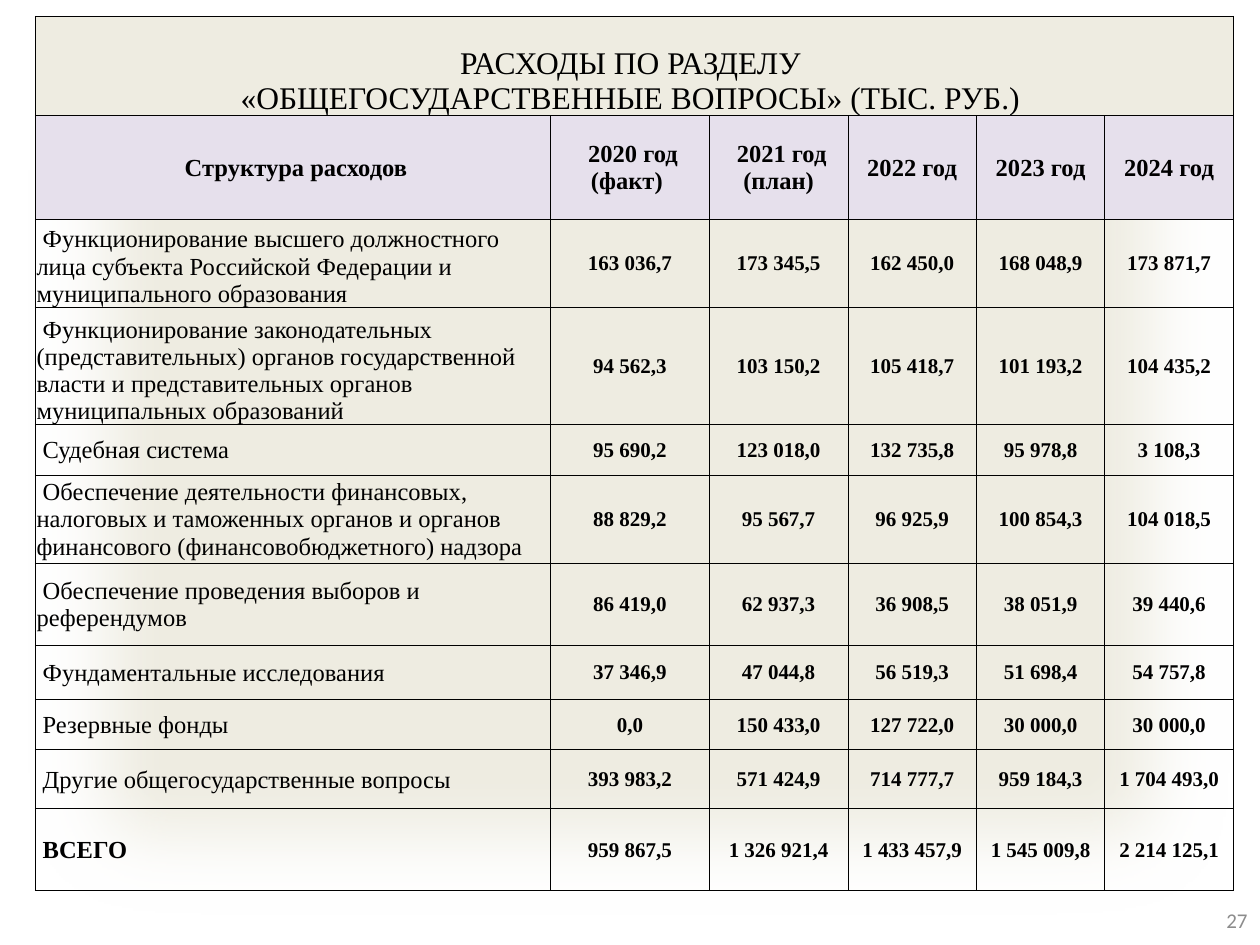
from lxml.etree import SubElement
from pptx import Presentation
from pptx.dml.color import RGBColor
from pptx.enum.shapes import MSO_SHAPE
from pptx.enum.text import MSO_ANCHOR, PP_ALIGN
from pptx.oxml import parse_xml
from pptx.oxml.ns import nsdecls, qn
from pptx.util import Inches, Pt

BEIGE = RGBColor(0xEE, 0xEC, 0xE1)
LILAC = RGBColor(0xE6, 0xE0, 0xEC)
BLACK = RGBColor(0, 0, 0)
GREY = RGBColor(0x8C, 0x8C, 0x8C)
NBSP = " "  # no-break space that indents the labels

TITLE = ["РАСХОДЫ ПО РАЗДЕЛУ ", "«ОБЩЕГОСУДАРСТВЕННЫЕ ВОПРОСЫ» (ТЫС. РУБ.)" + NBSP]
HEADER = ["Структура расходов", "2020 год (факт) ", "2021 год (план)",
          "2022 год ", "2023 год ", "2024 год "]
EXPENSES = [
    ("Функционирование высшего должностного лица субъекта Российской Федерации "
     "и муниципального образования",
     "163 036,7", "173 345,5", "162 450,0", "168 048,9", "173 871,7"),
    ("Функционирование законодательных (представительных) органов государственной "
     "власти и представительных органов муниципальных образований",
     "94 562,3", "103 150,2", "105 418,7", "101 193,2", "104 435,2"),
    ("Судебная система",
     "95 690,2", "123 018,0", "132 735,8", "95 978,8", "3 108,3"),
    ("Обеспечение деятельности финансовых, налоговых и таможенных органов и органов "
     "финансового (финансовобюджетного) надзора",
     "88 829,2", "95 567,7", "96 925,9", "100 854,3", "104 018,5"),
    ("Обеспечение проведения выборов и референдумов",
     "86 419,0", "62 937,3", "36 908,5", "38 051,9", "39 440,6"),
    ("Фундаментальные исследования",
     "37 346,9", "47 044,8", "56 519,3", "51 698,4", "54 757,8"),
    ("Резервные фонды",
     "0,0", "150 433,0", "127 722,0", "30 000,0", "30 000,0"),
    ("Другие общегосударственные вопросы",
     "393 983,2", "571 424,9", "714 777,7", "959 184,3", "1 704 493,0"),
    ("ВСЕГО",
     "959 867,5", "1 326 921,4", "1 433 457,9", "1 545 009,8", "2 214 125,1"),
]
COL_WIDTHS = [4.09, 1.26, 1.1, 1.02, 1.02, 1.02]
ROW_HEIGHTS = [0.79, 0.82, 0.7, 0.93, 0.4, 0.7, 0.65, 0.43, 0.4, 0.47, 0.65]


class SlideBuilder:
    """Holds the text style and the current slide."""

    font = "Times New Roman"

    def __init__(self, slide):
        self.s = slide

    def add_run(self, p, text, size, bold=False, color=BLACK, font=None):
        r = p.add_run()
        r.text = text
        r.font.size, r.font.bold = Pt(size), bold
        r.font.name = font or self.font
        r.font.color.rgb = color

    def backdrop(self, width, height, color, soft_edge):
        sp = self.s.shapes.add_shape(MSO_SHAPE.RECTANGLE, 0, 0, width, height)
        sp.fill.solid()
        sp.fill.fore_color.rgb = color
        sp.line.fill.background()
        sp.shadow.inherit = False
        effects = sp._element.spPr.find(qn("a:effectLst"))
        SubElement(effects, qn("a:softEdge"), rad=str(soft_edge))

    def table(self, left, top, col_widths, row_heights):
        frame = self.s.shapes.add_table(
            len(row_heights), len(col_widths), left, top,
            Inches(sum(col_widths)), Inches(sum(row_heights)))
        table = frame.table
        table.first_row = table.horz_banding = False
        for col, width in zip(table.columns, col_widths):
            col.width = Inches(width)
        for row, height in zip(table.rows, row_heights):
            row.height = Inches(height)
        for cell in table.iter_cells():
            self.format_cell(cell)
        return table

    def format_cell(self, cell):
        cell.margin_left = cell.margin_right = cell.margin_top = Inches(0.01)
        cell.margin_bottom = 0
        cell.vertical_anchor = MSO_ANCHOR.MIDDLE
        cell.fill.background()
        tc_pr = cell._tc.get_or_add_tcPr()
        for i, side in enumerate(("lnL", "lnR", "lnT", "lnB")):
            tc_pr.insert(i, parse_xml(
                f'<a:{side} {nsdecls("a")} w="{Pt(0.5)}"><a:solidFill>'
                f'<a:srgbClr val="{BLACK}"/></a:solidFill></a:{side}>'))

    def cell_text(self, cell, lines, size, bold=False, align=PP_ALIGN.CENTER, fill=None):
        if fill is not None:
            cell.fill.solid()
            cell.fill.fore_color.rgb = fill
        tf = cell.text_frame
        for i, line in enumerate(lines):
            p = tf.add_paragraph() if i else tf.paragraphs[0]
            p.alignment = align
            self.add_run(p, line, size, bold)

    def page_number(self, left, top, width, height, number):
        tf = self.s.shapes.add_textbox(left, top, width, height).text_frame
        tf.word_wrap = True
        tf.vertical_anchor = MSO_ANCHOR.MIDDLE
        p = tf.paragraphs[0]
        p.alignment = PP_ALIGN.RIGHT
        self.add_run(p, number, 12, color=GREY, font="Calibri")


def main():
    prs = Presentation()
    prs.slide_width, prs.slide_height = Inches(10), Inches(7.5)
    b = SlideBuilder(prs.slides.add_slide(prs.slide_layouts[6]))

    # Backdrop with faded edges
    b.backdrop(prs.slide_width, prs.slide_height, BEIGE, Pt(50))

    # Title row, merged across the table
    table = b.table(Inches(0.28), Inches(0.13), COL_WIDTHS, ROW_HEIGHTS)
    title = table.cell(0, 0)
    title.merge(table.cell(0, len(COL_WIDTHS) - 1))
    title.vertical_anchor = MSO_ANCHOR.BOTTOM
    b.cell_text(title, TITLE, 18, fill=BEIGE)

    # Header row
    for col, text in enumerate(HEADER):
        b.cell_text(table.cell(1, col), [NBSP + text], 14, bold=True, fill=LILAC)

    # Expense rows; the last one is the total
    for row, (label, *values) in enumerate(EXPENSES, start=2):
        b.cell_text(table.cell(row, 0), [NBSP + label], 14,
                    bold=row == len(ROW_HEIGHTS) - 1, align=PP_ALIGN.LEFT)
        for col, value in enumerate(values, start=1):
            b.cell_text(table.cell(row, col), [value], 12, bold=True)
    for row in (2, 3):
        table.cell(row, 0).vertical_anchor = MSO_ANCHOR.BOTTOM

    # Page number
    b.page_number(Inches(7.67), Inches(7.1), Inches(2.33), Inches(0.4), "27")

    prs.save("out.pptx")


if __name__ == "__main__":
    main()
